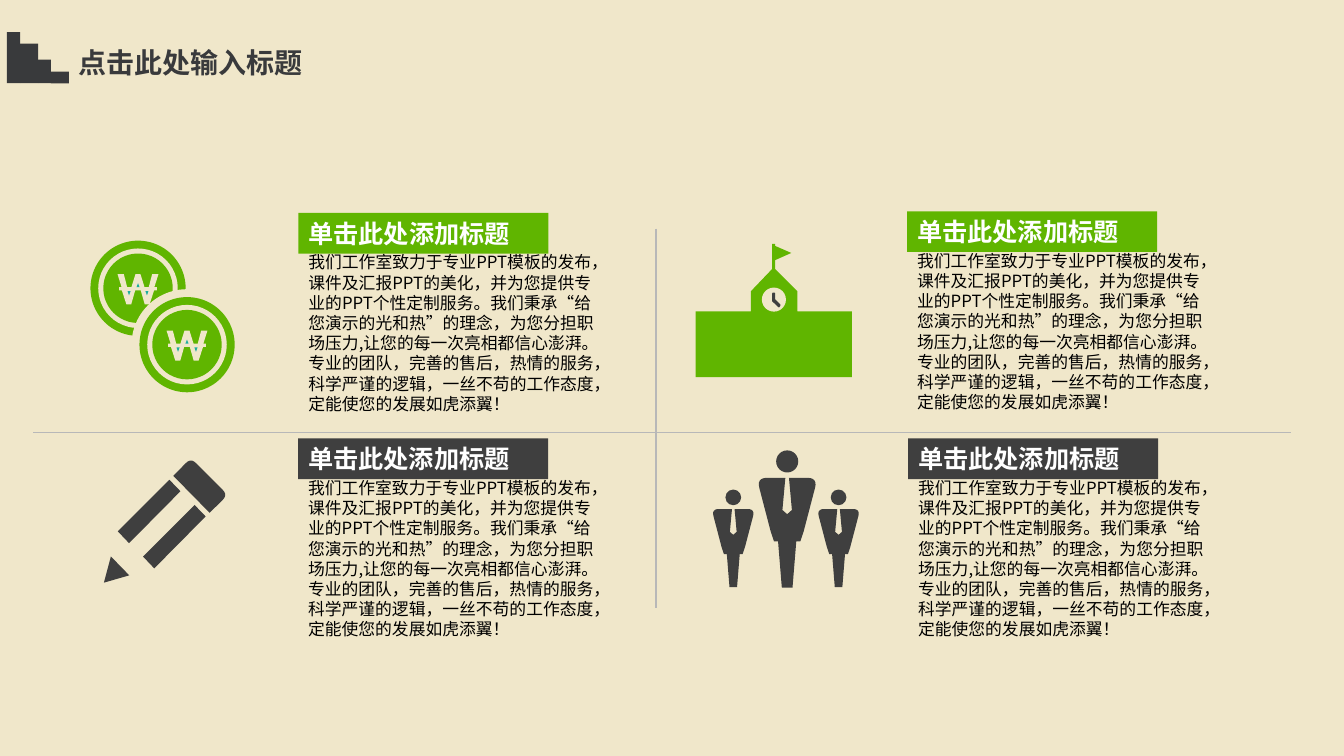
"""Build a slide with four illustrated text panels in a two-by-two grid."""
from lxml import etree
from pptx import Presentation
from pptx.dml.color import RGBColor
from pptx.enum.shapes import MSO_CONNECTOR, MSO_SHAPE
from pptx.enum.text import MSO_ANCHOR, MSO_AUTO_SIZE, PP_ALIGN
from pptx.oxml.ns import qn
from pptx.util import Pt

RECTANGLE = MSO_SHAPE.RECTANGLE
OVAL = MSO_SHAPE.OVAL
STRAIGHT = MSO_CONNECTOR.STRAIGHT
MIDDLE = MSO_ANCHOR.MIDDLE
TOP = MSO_ANCHOR.TOP
FIT_SHAPE = MSO_AUTO_SIZE.SHAPE_TO_FIT_TEXT
NO_FIT = MSO_AUTO_SIZE.NONE
LEFT = PP_ALIGN.LEFT

CREAM = RGBColor(0xF0, 0xE7, 0xCA)
SLATE = RGBColor(0x39, 0x3A, 0x3C)
GREEN = RGBColor(0x60, 0xB5, 0x00)
TEAL = RGBColor(0x1D, 0xAE, 0x9E)
DARK = RGBColor(0x3F, 0x3F, 0x3F)
GRAY = RGBColor(0xB8, 0xB8, 0xB8)
WHITE = RGBColor(0xFF, 0xFF, 0xFF)
BLACK = RGBColor(0x00, 0x00, 0x00)

TITLE = "点击此处输入标题"
HEADING = "单击此处添加标题"
BODY = (
    "我们工作室致力于专业PPT模板的发布，课件及汇报PPT的美化，并为您提供专业的PPT个性定制服务。"
    "我们秉承“给您演示的光和热”的理念，为您分担职场压力,让您的每一次亮相都信心澎湃。"
    "专业的团队，完善的售后，热情的服务，科学严谨的逻辑，一丝不苟的工作态度，定能使您的发展如虎添翼！"
)

STAIR_EDGES = [5, 14.4, 27.2, 36.4, 49.2]
STAIR_TOPS = [23, 31.2, 42.6, 51.2]
STAIR_BOTTOM = 59.5
PANELS = [
    (213.2, 152.1, GREEN, 138.2),
    (648, 151, GREEN, 123.8),
    (213, 313.2, DARK, 123.8),
    (648.7, 313.2, DARK, 123.8),
]
COINS = [(98.6, 205.9), (133.6, 246.2)]
WON_HALF = [
    (1.8, -10), (4.7, -0.7), (7.7, -0.7), (10.1, -10), (14.6, -10), (11.7, -0.7),
    (13.5, -0.7), (13.5, 1.6), (11.5, 1.6), (8.3, 11.5), (4.8, 11.5), (2, 1.6),
]
WON_TRIANGLES = [
    [(0, -3.6), (1.1, -0.7), (-1.1, -0.7)],
    [(-6.4, 5.1), (-7.5, 2), (-5.3, 2)],
    [(6.4, 5.1), (5.3, 2), (7.5, 2)],
]
PENCIL_BAR = [(121, 342.7), (128.9, 350.9), (92.2, 388), (84.2, 379.6)]
PENCIL_TIP = [(74.2, 416.2), (92.3, 411), (79.2, 397.5)]
PENCIL_ERASER = [(123.8, 339.9), (149.8, 366.3), (162.7, 353.5, 5), (136.4, 327.2, 5)]
SCHOOL = [
    (496.8, 222.5), (536.4, 222.5), (536.4, 208), (551.5, 192.2), (551.5, 174.2),
    (553.7, 174.2), (553.7, 175.7), (565.2, 180.7), (553.7, 185.8), (553.7, 192.2),
    (569.5, 208), (569.5, 222.5), (608.4, 222.5), (608.4, 269.3), (496.8, 269.3),
]
CLOCK_HANDS = [
    (551.6, 209, 1), (553.8, 209, 1), (553.8, 213.8), (557.8, 217.8, 1),
    (556.5, 219.9, 1), (551.6, 215.2),
]
PERSON_HALF = [
    (0, 26), (3.4, 23), (1.3, 0), (21.8, 0, 7.5), (11.8, 38.2), (9.4, 45.4),
    (6.5, 45.4), (3.8, 78.5),
]
PEOPLE = [(562.3, 341.3, 1), (523.8, 363.6, 0.71), (599, 363.6, 0.71)]


def mirrored(half):
    """Close a right half-outline with its reflection in the vertical axis."""
    return half + [(-point[0], *point[1:]) for point in reversed(half) if point[0]]


def placed(points, x, y, scale=1):
    """Scale points and any corner radii, then move them to x, y."""
    return [
        (x + px * scale, y + py * scale, *(r * scale for r in radius))
        for px, py, *radius in points
    ]


def toward(start, end, distance):
    """Return the point at a distance from start on the way to end."""
    dx, dy = end[0] - start[0], end[1] - start[1]
    share = distance / (dx * dx + dy * dy) ** 0.5
    return start[0] + dx * share, start[1] + dy * share


def rounded(points, steps=6):
    """Replace each corner that carries a radius by a short curve."""
    result = []
    for index, corner in enumerate(points):
        if len(corner) == 2:
            result.append(corner)
            continue
        x, y, radius = corner
        first = toward(corner, points[index - 1], radius)
        last = toward(corner, points[(index + 1) % len(points)], radius)
        for step in range(steps + 1):
            t = step / steps
            a, b, c = (1 - t) ** 2, 2 * t * (1 - t), t * t
            result.append((a * first[0] + b * x + c * last[0],
                           a * first[1] + b * y + c * last[1]))
    return result


class SlideBuilder:
    """Hold the font and the current slide, and add styled elements."""

    def __init__(self, slide, font="Noto Sans CJK SC"):
        """Remember the slide and font, and colour the background."""
        self.slide, self.font = slide, font
        slide.background.fill.solid()
        slide.background.fill.fore_color.rgb = CREAM

    def paint(self, shape, color):
        """Give a shape a flat fill without outline or shadow."""
        shape.shadow.inherit = False
        shape.fill.solid()
        shape.fill.fore_color.rgb = color
        shape.line.fill.background()
        return shape

    def set_text(self, shape, text, size, color, bold=False, anchor=MIDDLE, fit=NO_FIT):
        """Fill a shape with one left-aligned paragraph."""
        frame = shape.text_frame
        frame.text = text
        frame.word_wrap = True
        frame.auto_size = fit
        frame.vertical_anchor = anchor
        paragraph = frame.paragraphs[0]
        paragraph.alignment = LEFT
        font = paragraph.font
        font.name, font.size, font.bold = self.font, Pt(size), bold
        font.color.rgb = color
        properties = paragraph._p.pPr.find(qn("a:defRPr"))
        etree.SubElement(properties, qn("a:ea")).set("typeface", self.font)
        return paragraph

    def title(self, text, left, top, width, height):
        """Place and format the title placeholder."""
        shape = self.slide.shapes.title
        shape.left, shape.top = Pt(left), Pt(top)
        shape.width, shape.height = Pt(width), Pt(height)
        self.set_text(shape, text, 20, SLATE, bold=True)

    def rectangle(self, left, top, width, height, color):
        """Add a flat rectangle."""
        shape = self.slide.shapes.add_shape(RECTANGLE, Pt(left), Pt(top), Pt(width), Pt(height))
        return self.paint(shape, color)

    def circle(self, x, y, radius, color):
        """Add a flat circle around a centre."""
        shape = self.slide.shapes.add_shape(
            OVAL, Pt(x - radius), Pt(y - radius), Pt(2 * radius), Pt(2 * radius))
        self.paint(shape, color)

    def outline(self, points, color):
        """Add a flat closed freeform."""
        start, *rest = [(Pt(x), Pt(y)) for x, y in rounded(points)]
        builder = self.slide.shapes.build_freeform(*start)
        builder.add_line_segments(rest)
        self.paint(builder.convert_to_shape(), color)

    def line(self, x1, y1, x2, y2):
        """Add a thin gray divider."""
        connector = self.slide.shapes.add_connector(STRAIGHT, Pt(x1), Pt(y1), Pt(x2), Pt(y2))
        connector.line.color.rgb = GRAY
        connector.line.width = Pt(1.25)
        etree.SubElement(connector._element.spPr, qn("a:effectLst"))

    def panel(self, left, top, color, height):
        """Add a coloured heading with its text below."""
        banner = self.rectangle(left, top, 178.6, 29, color)
        self.set_text(banner, HEADING, 18, WHITE, bold=True)
        box = self.slide.shapes.add_textbox(Pt(left), Pt(top + 24.3), Pt(219.6), Pt(height))
        paragraph = self.set_text(box, BODY, 12, BLACK, anchor=TOP, fit=FIT_SHAPE)
        paragraph.line_spacing = Pt(14.45)

    def coin(self, x, y):
        """Add a won coin with a clear margin around it."""
        for radius, color in ((39.6, CREAM), (34, GREEN), (28.4, CREAM), (24.8, GREEN)):
            self.circle(x, y, radius, color)
        self.outline(placed(mirrored(WON_HALF), x, y), CREAM)
        for triangle in WON_TRIANGLES:
            self.outline(placed(triangle, x, y), TEAL)

    def person(self, x, y, scale):
        """Add a figure in a suit with its shoulders at y."""
        self.circle(x, y - 11.7 * scale, 7.9 * scale, DARK)
        self.outline(placed(mirrored(PERSON_HALF), x, y, scale), DARK)


def main():
    """Create and save the presentation."""
    presentation = Presentation()
    presentation.slide_width, presentation.slide_height = Pt(960), Pt(540)
    builder = SlideBuilder(presentation.slides.add_slide(presentation.slide_layouts[5]))
    builder.title(TITLE, 49, 28.8, 181.4, 31.7)
    for left, right, top in zip(STAIR_EDGES, STAIR_EDGES[1:], STAIR_TOPS):
        builder.rectangle(left, top, right - left, STAIR_BOTTOM - top, SLATE)
    builder.line(468.7, 163.4, 468.7, 434.2)
    builder.line(23.8, 308.9, 922.3, 308.9)
    for coin in COINS:
        builder.coin(*coin)
    for offset in (0, 18):
        builder.outline(placed(PENCIL_BAR, offset, offset), DARK)
    builder.outline(PENCIL_TIP, DARK)
    builder.outline(PENCIL_ERASER, DARK)
    builder.outline(SCHOOL, GREEN)
    builder.circle(552.8, 214, 8.6, CREAM)
    builder.outline(CLOCK_HANDS, DARK)
    for person in PEOPLE:
        builder.person(*person)
    for panel in PANELS:
        builder.panel(*panel)
    presentation.save("out.pptx")


if __name__ == "__main__":
    main()
